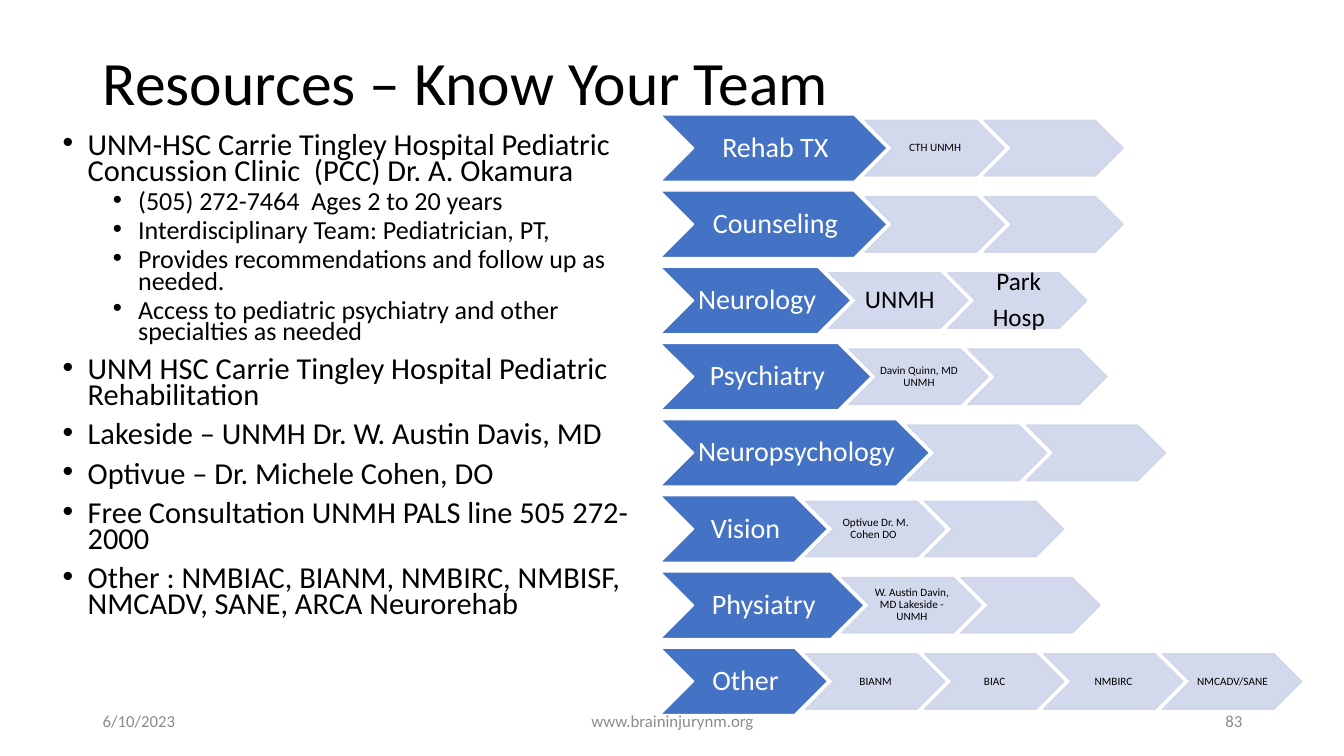
from lxml import etree
from pptx import Presentation
from pptx import util as u
from pptx.dml.color import RGBColor
from pptx.enum import shapes, text
from pptx.oxml import ns

TEAM_NOTES = [
    (0, "UNM-HSC Carrie Tingley Hospital Pediatric Concussion Clinic  (PCC) Dr. A. Okamura"),
    (1, "(505) 272-7464  Ages 2 to 20 years"),
    (1, "Interdisciplinary Team: Pediatrician, PT,"),
    (1, "Provides recommendations and follow up as needed."),
    (1, "Access to pediatric psychiatry and other specialties as needed"),
    (0, "UNM HSC Carrie Tingley Hospital Pediatric Rehabilitation"),
    (0, "Lakeside – UNMH Dr. W. Austin Davis, MD"),
    (0, "Optivue – Dr. Michele Cohen, DO"),
    (0, "Free Consultation UNMH PALS line 505 272-2000"),
    (0, "Other : NMBIAC, BIANM, NMBIRC, NMBISF, NMCADV, SANE, ARCA Neurorehab"),
]

# service, width of its chevron, text size of its providers, providers
SERVICES = [
    ("Rehab TX", 2.25, 8, ["CTH UNMH", ""]),
    ("Counseling", 2.25, 8, ["", ""]),
    ("Neurology", 1.89, 18, ["UNMH", "Park\nHosp"]),
    ("Psychiatry", 2.09, 8, ["Davin Quinn, MD UNMH", ""]),
    ("Neuropsychology", 2.67, 8, ["", ""]),
    ("Vision", 1.66, 8, ["Optivue Dr. M. Cohen DO\t", ""]),
    ("Physiatry", 2.02, 8, ["W. Austin Davin, MD Lakeside - UNMH", ""]),
    ("Other", 1.66, 8, ["BIANM", "BIAC", "NMBIRC", "NMCADV/SANE"]),
]
SERVICE_LEFT, SERVICE_TOP, SERVICE_HEIGHT = 6.55, 1.14, 0.66
ROW_PITCH = (6.43 - SERVICE_TOP) / (len(SERVICES) - 1)
PROVIDER_WIDTH, PROVIDER_HEIGHT = 1.38, 0.55
PROVIDER_PITCH, PROVIDER_OVERLAP = 1.18, 0.22

LEFT, CENTER, RIGHT = text.PP_ALIGN.LEFT, text.PP_ALIGN.CENTER, text.PP_ALIGN.RIGHT


def color(hex_code):
    return RGBColor.from_string(hex_code)


def write(paragraph, words, size, font="Calibri", ink="000000", align=LEFT,
          spacing=1.0, before=0, after=0):
    paragraph.alignment = align
    paragraph.line_spacing = spacing
    paragraph.space_before = u.Pt(before)
    paragraph.space_after = u.Pt(after)
    run = paragraph.add_run()
    run.text = words
    run.font.size = u.Pt(size)
    run.font.name = font
    run.font.color.rgb = color(ink)


def add_bullet(paragraph, indent, hanging=0.25):
    properties = paragraph._p.get_or_add_pPr()
    properties.set("marL", str(u.Inches(indent)))
    properties.set("indent", str(-u.Inches(hanging)))
    etree.SubElement(properties, ns.qn("a:buFont")).set("typeface", "Arial")
    etree.SubElement(properties, ns.qn("a:buChar")).set("char", "•")


class TeamSlide:
    ACCENT, TINT, WHITE, GREY = "4472C4", "CFD5EA", "FFFFFF", "8C8C8C"

    def __init__(self, deck):
        self.slide = deck.slides.add_slide(deck.slide_layouts[1])

    def place(self, holder, left, top, width, height):
        holder.left, holder.top = u.Inches(left), u.Inches(top)
        holder.width, holder.height = u.Inches(width), u.Inches(height)
        frame = holder.text_frame
        frame.word_wrap = True
        frame.auto_size = text.MSO_AUTO_SIZE.NONE
        return frame

    def title(self, words, *box):
        frame = self.place(self.slide.shapes.title, *box)
        frame.vertical_anchor = text.MSO_ANCHOR.MIDDLE
        write(frame.paragraphs[0], words, 44, spacing=0.9)

    def bullets(self, items, *box):
        frame = self.place(self.slide.placeholders[1], *box)
        frame.vertical_anchor = text.MSO_ANCHOR.TOP
        for number, (level, words) in enumerate(items):
            paragraph = frame.add_paragraph() if number else frame.paragraphs[0]
            paragraph.level = level
            before = (5 if level else 10) if number else 0
            write(paragraph, words, 18.6 if level else 21.7, spacing=0.7, before=before)
            add_bullet(paragraph, 0.75 if level else 0.25)

    def chevron(self, words, box, size, fill, line, ink, opacity=100):
        arrow = self.slide.shapes.add_shape(
            shapes.MSO_SHAPE.CHEVRON, *(u.Inches(length) for length in box))
        arrow.shadow.inherit = False
        arrow.fill.solid()
        arrow.fill.fore_color.rgb = color(fill)
        arrow.line.color.rgb = color(line)
        arrow.line.width = u.Pt(1)
        if opacity < 100:
            for tone in arrow._element.spPr.iter(ns.qn("a:srgbClr")):
                etree.SubElement(tone, ns.qn("a:alpha")).set("val", str(opacity * 1000))
        if not words:
            return
        frame = arrow.text_frame
        frame.word_wrap = True
        frame.vertical_anchor = text.MSO_ANCHOR.MIDDLE
        frame.margin_left = u.Inches(0.01 if size < 10 else 0.03)
        frame.margin_top = frame.margin_bottom = u.Inches(0.01)
        frame.margin_right = 0
        lines = words.split("\n")
        for number, part in enumerate(lines):
            paragraph = frame.add_paragraph() if number else frame.paragraphs[0]
            after = 0 if number == len(lines) - 1 else 0.35 * size
            write(paragraph, part, size, ink=ink, align=CENTER, spacing=0.9, after=after)

    def service_row(self, row, service, width, size, providers):
        """Draw a service chevron followed by its provider chevrons."""
        top = SERVICE_TOP + row * ROW_PITCH
        self.chevron(service, (SERVICE_LEFT, top, width, SERVICE_HEIGHT), 20,
                     self.ACCENT, self.WHITE, self.WHITE)
        first_left = SERVICE_LEFT + width - PROVIDER_OVERLAP
        provider_top = top + (SERVICE_HEIGHT - PROVIDER_HEIGHT) / 2
        for column, provider in enumerate(providers):
            box = (first_left + column * PROVIDER_PITCH, provider_top,
                   PROVIDER_WIDTH, PROVIDER_HEIGHT)
            self.chevron(provider, box, size, self.TINT, self.TINT, "000000", opacity=90)

    def footer(self, words, left, width, align):
        holder = self.slide.shapes.add_textbox(0, 0, 0, 0)
        frame = self.place(holder, left, 6.95, width, 0.4)
        frame.vertical_anchor = text.MSO_ANCHOR.MIDDLE
        write(frame.paragraphs[0], words, 12, ink=self.GREY, align=align)


def main():
    deck = Presentation()
    deck.slide_width, deck.slide_height = u.Inches(13.33), u.Inches(7.5)
    team = TeamSlide(deck)
    team.title("Resources – Know Your Team", 0.92, 0.4, 7.47, 0.89)
    team.bullets(TEAM_NOTES, 0.52, 1.29, 6.06, 5.46)
    for row, service in enumerate(SERVICES):
        team.service_row(row, *service)
    team.footer("6/10/2023", 0.92, 3, LEFT)
    team.footer("www.braininjurynm.org", 4.42, 4.5, CENTER)
    team.footer("83", 9.42, 3, RIGHT)
    deck.save("out.pptx")


if __name__ == "__main__":
    main()
